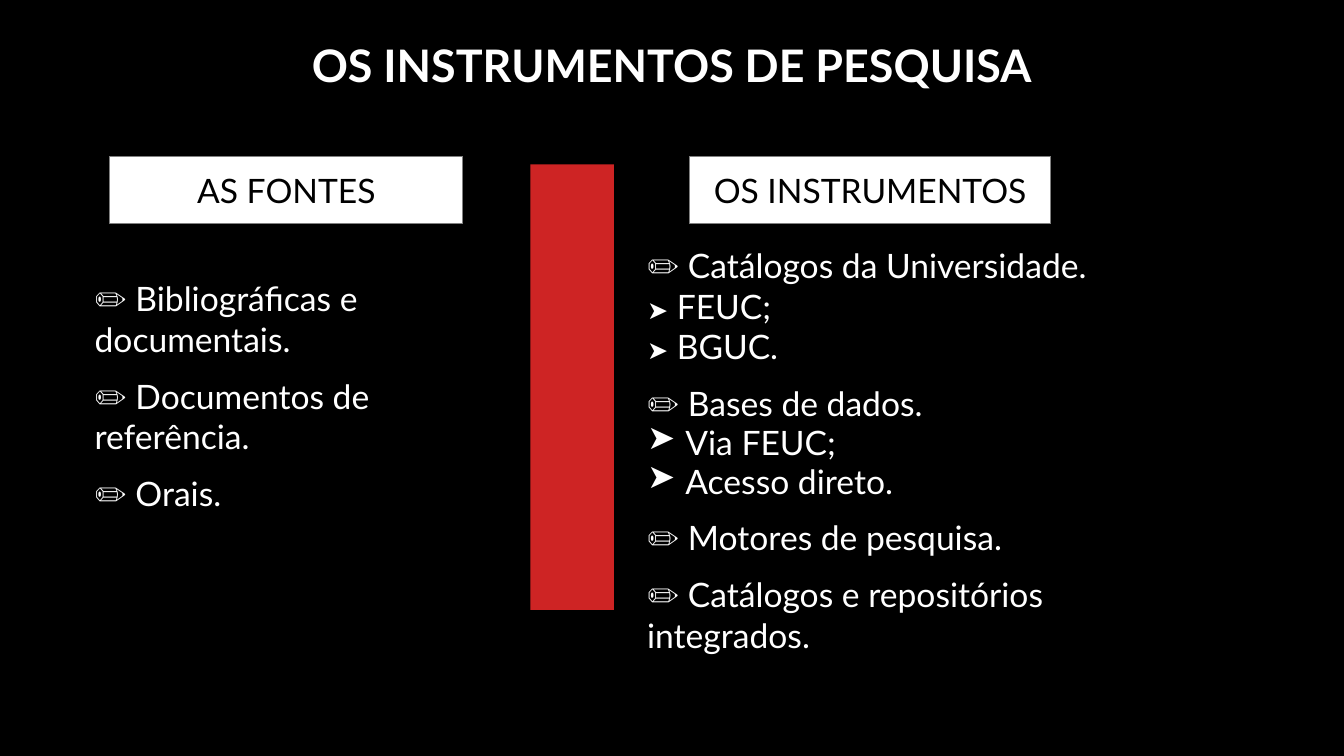
"""Build a slide that sets research sources beside research instruments."""
from dataclasses import dataclass

from lxml import etree
from pptx import Presentation
from pptx import util as u
from pptx.dml.color import RGBColor
from pptx.enum import shapes, text
from pptx.oxml import ns


@dataclass(frozen=True)
class Theme:
    """Colours, font and type sizes of the slide."""
    black: RGBColor = RGBColor(0x00, 0x00, 0x00)
    white: RGBColor = RGBColor(0xFF, 0xFF, 0xFF)
    red: RGBColor = RGBColor(0xCE, 0x24, 0x24)
    grey: RGBColor = RGBColor(0x80, 0x80, 0x80)
    font: str = "Lato"
    title: u.Pt = u.Pt(32)
    body: u.Pt = u.Pt(24)
    marker: u.Pt = u.Pt(18)


THEME = Theme()
ARROW = "➤"
SOURCES = [
    ("topic", "Bibliográficas e documentais."),
    ("topic", "Documentos de referência."),
    ("topic", "Orais."),
]
INSTRUMENTS = [
    ("topic", "Catálogos da Universidade."),
    ("marked", "FEUC;"),
    ("marked", "BGUC."),
    ("topic", "Bases de dados."),
    ("bulleted", "Via FEUC;"),
    ("bulleted", "Acesso direto."),
    ("topic", "Motores de pesquisa."),
    ("topic", "Catálogos e repositórios integrados."),
]
SPACING = {"topic": (1.0, 12), "marked": (0.75, 7.2), "bulleted": (0.75, 6)}


def set_font(para, size, color, bold=False):
    """Set the font shared by all runs of a paragraph."""
    font = para.font
    font.name, font.size, font.bold = THEME.font, size, bold
    font.color.rgb = color


def add_text_box(page, left, top, width, height):
    """Add a wrapping text box and return its text frame."""
    box = page.shapes.add_textbox(*map(u.Inches, (left, top, width, height)))
    box.text_frame.word_wrap = True
    return box.text_frame


def add_title(page, words):
    """Add the centred title across the slide."""
    frame = add_text_box(page, 0, 0.13, 13.33, 0.83)
    frame.vertical_anchor = text.MSO_ANCHOR.BOTTOM
    para = frame.paragraphs[0]
    para.text = words
    para.alignment = text.PP_ALIGN.CENTER
    para.line_spacing = 0.9
    set_font(para, THEME.title, THEME.white, bold=True)


def add_panel(page, left, top, width, height, fill):
    """Add a flat rectangle without an outline."""
    panel = page.shapes.add_shape(
        shapes.MSO_SHAPE.RECTANGLE, *map(u.Inches, (left, top, width, height)))
    panel.shadow.inherit = False
    panel.fill.solid()
    panel.fill.fore_color.rgb = fill
    panel.line.fill.background()
    return panel


def add_heading(page, left, width, words):
    """Add a white column heading with a hairline outline."""
    panel = add_panel(page, left, 1.55, width, 0.67, THEME.white)
    panel.line.color.rgb = THEME.grey
    panel.line.width = u.Pt(0)
    frame = panel.text_frame
    frame.word_wrap = False
    frame.vertical_anchor = text.MSO_ANCHOR.MIDDLE
    para = frame.paragraphs[0]
    para.text = words
    para.alignment = text.PP_ALIGN.CENTER
    set_font(para, THEME.body, THEME.black)


def add_bullet(para):
    """Give a paragraph a hanging arrow bullet."""
    properties = para._p.get_or_add_pPr()
    indent = u.Inches(0.38)
    properties.set("marL", str(indent))
    properties.set("indent", str(-indent))
    etree.SubElement(properties, ns.qn("a:buChar")).set("char", ARROW)


def add_item(para, kind, words):
    """Write one list item in the style of its kind."""
    if kind == "bulleted":
        add_bullet(para)
    set_font(para, THEME.body, THEME.white)
    para.line_spacing = SPACING[kind][0]
    if kind == "marked":
        span = para.add_run()
        span.text = ARROW
        span.font.size, span.font.bold = THEME.marker, True
    prefix = {"topic": "✏ ", "marked": " ", "bulleted": ""}[kind]
    para.add_run().text = prefix + words


def add_list(page, left, top, width, height, items):
    """Add a column of list items."""
    frame = add_text_box(page, left, top, width, height)
    for index, (kind, words) in enumerate(items):
        para = frame.add_paragraph() if index else frame.paragraphs[0]
        add_item(para, kind, words)
        if index:
            para.space_before = u.Pt(SPACING[kind][1])


def main():
    """Build and save the deck."""
    deck = Presentation()
    deck.slide_width, deck.slide_height = u.Inches(13.33), u.Inches(7.5)
    page = deck.slides.add_slide(deck.slide_layouts[6])
    page.background.fill.solid()
    page.background.fill.fore_color.rgb = THEME.black
    add_title(page, "OS INSTRUMENTOS DE PESQUISA")
    add_panel(page, 5.26, 1.63, 0.83, 4.42, THEME.red)
    add_heading(page, 1.09, 3.5, "AS FONTES")
    add_heading(page, 6.84, 3.58, "OS INSTRUMENTOS")
    add_list(page, 0.84, 2.71, 4.25, 2.52, SOURCES)
    add_list(page, 6.32, 2.38, 4.83, 4.38, INSTRUMENTS)
    deck.save("out.pptx")


if __name__ == "__main__":
    main()
